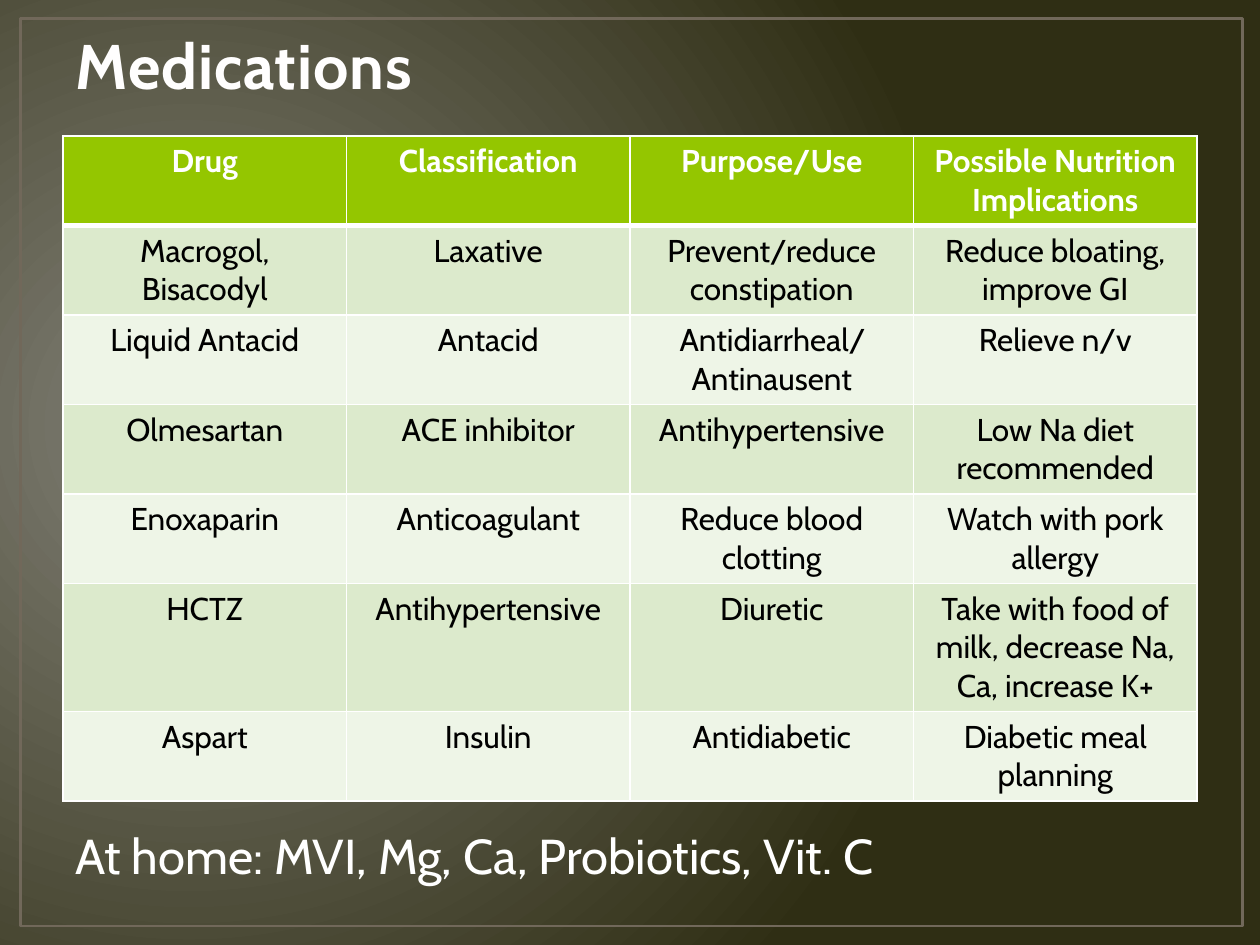
from dataclasses import dataclass

from lxml import etree
from pptx import Presentation
from pptx.dml.color import RGBColor
from pptx.enum import shapes, text
from pptx.oxml import ns
from pptx.util import Cm, Pt


@dataclass(frozen=True)
class Theme:
    font: str = "Cabin"
    glow: str = "818076"
    dark: str = "2F2E14"
    frame: str = "71685A"
    title: str = "FFFEFE"
    title_edge: str = "4A6300"
    white: str = "FFFFFF"
    black: str = "000000"
    header: str = "94C600"
    bands: tuple = ("DCEACC", "EEF5E7")
    title_size: int = 36
    table_size: int = 18
    note_size: int = 28


THEME = Theme()
A = ns.nsdecls("a")
MEDICATIONS = [
    ("Drug", "Classification", "Purpose/Use", "Possible Nutrition Implications"),
    ("Macrogol, Bisacodyl", "Laxative", "Prevent/reduce constipation",
     "Reduce bloating, improve GI"),
    ("Liquid Antacid", "Antacid", "Antidiarrheal/Antinausent", "Relieve n/v"),
    ("Olmesartan", "ACE inhibitor", "Antihypertensive", "Low Na diet recommended"),
    ("Enoxaparin", "Anticoagulant", "Reduce blood clotting", "Watch with pork allergy"),
    ("HCTZ", "Antihypertensive", "Diuretic",
     "Take with food of milk, decrease Na, Ca, increase K+"),
    ("Aspart", "Insulin", "Antidiabetic", "Diabetic meal planning"),
]
ROW_HEIGHTS = [1.7] * 5 + [2.44, 1.7]


def write(frame, words, size, color, bold=False, align=text.PP_ALIGN.LEFT):
    """Fill a text frame with one formatted run and return the run."""
    paragraph = frame.paragraphs[0]
    paragraph.alignment = align
    run = paragraph.add_run()
    run.text = words
    for name, value in {"name": THEME.font, "size": Pt(size), "bold": bold}.items():
        setattr(run.font, name, value)
    run.font.color.rgb = RGBColor.from_string(color)
    return run


def place(shape, box):
    for name, value in zip(("left", "top", "width", "height"), box):
        setattr(shape, name, Cm(value))


def paint_background(slide):
    slide.background.fill.solid()
    properties = slide.background._cSld.bg.bgPr
    stops = "".join(
        f'<a:gs pos="{position}"><a:srgbClr val="{color}"/></a:gs>'
        for position, color in ((0, THEME.glow), (100000, THEME.dark)))
    gradient = etree.fromstring(
        f'<a:gradFill {A} rotWithShape="1"><a:gsLst>{stops}</a:gsLst><a:path path="circle">'
        '<a:fillToRect l="15000" t="50000" r="85000" b="60000"/></a:path></a:gradFill>')
    properties.replace(properties[0], gradient)


def add_frame(slide, box):
    frame = slide.shapes.add_shape(shapes.MSO_SHAPE.RECTANGLE, *map(Cm, box))
    frame.shadow.inherit = False
    frame.fill.background()
    frame.line.color.rgb = RGBColor.from_string(THEME.frame)
    frame.line.width = Pt(1.5)
    # The frame lies behind the title
    slide.shapes._spTree.insert(2, frame._element)


def set_title(slide, box):
    title = slide.shapes.title
    place(title, box)
    frame = title.text_frame
    frame.vertical_anchor = text.MSO_ANCHOR.BOTTOM
    frame.auto_size = text.MSO_AUTO_SIZE.NONE
    run = write(frame, "Medications", THEME.title_size, THEME.title, bold=True)
    properties = run.font._element
    properties.set("spc", "50")
    properties.insert(0, etree.fromstring(
        f'<a:ln {A} w="13335"><a:solidFill><a:srgbClr val="{THEME.title_edge}"/>'
        '</a:solidFill></a:ln>'))


def set_borders(cell, bottom):
    properties = cell._tc.get_or_add_tcPr()
    widths = {"lnL": 1, "lnR": 1, "lnT": 1, "lnB": bottom}
    for index, (side, width) in enumerate(widths.items()):
        properties.insert(index, etree.fromstring(
            f'<a:{side} {A} w="{Pt(width)}"><a:solidFill>'
            f'<a:srgbClr val="{THEME.white}"/></a:solidFill></a:{side}>'))


def add_medications(slide, box):
    table = slide.shapes.add_table(
        len(MEDICATIONS), len(MEDICATIONS[0]), *map(Cm, box)).table
    for row, height in zip(table.rows, ROW_HEIGHTS):
        row.height = Cm(height)
    for r, entries in enumerate(MEDICATIONS):
        is_header = r == 0
        fill = THEME.header if is_header else THEME.bands[(r - 1) % 2]
        color = THEME.white if is_header else THEME.black
        for c, words in enumerate(entries):
            cell = table.cell(r, c)
            cell.fill.solid()
            cell.fill.fore_color.rgb = RGBColor.from_string(fill)
            # Both cells on the header's lower edge carry the thick line
            set_borders(cell, 3 if is_header else 1)
            if r == 1:
                cell._tc.tcPr.find(ns.qn("a:lnT")).set("w", str(Pt(3)))
            write(cell.text_frame, words, THEME.table_size, color,
                  is_header, text.PP_ALIGN.CENTER)


def add_home_note(slide, box):
    note = slide.shapes.add_textbox(*map(Cm, box)).text_frame
    note.word_wrap = True
    note.auto_size = text.MSO_AUTO_SIZE.SHAPE_TO_FIT_TEXT
    write(note, "At home: MVI, Mg, Ca, Probiotics, Vit. C",
          THEME.note_size, THEME.white)


def main():
    deck = Presentation()
    deck.slide_width, deck.slide_height = Cm(25.4), Cm(19.05)
    slide = deck.slides.add_slide(deck.slide_layouts[5])
    margin, width = 1.27, 22.86
    paint_background(slide)
    add_frame(slide, (0.41, 0.38, 24.64, 18.29))
    set_title(slide, (margin, 0.2, width, 1.98))
    add_medications(slide, (margin, 2.74, width, sum(ROW_HEIGHTS)))
    add_home_note(slide, (margin, 16.51, 21.8, 1.45))
    deck.save("out.pptx")


if __name__ == "__main__":
    main()
